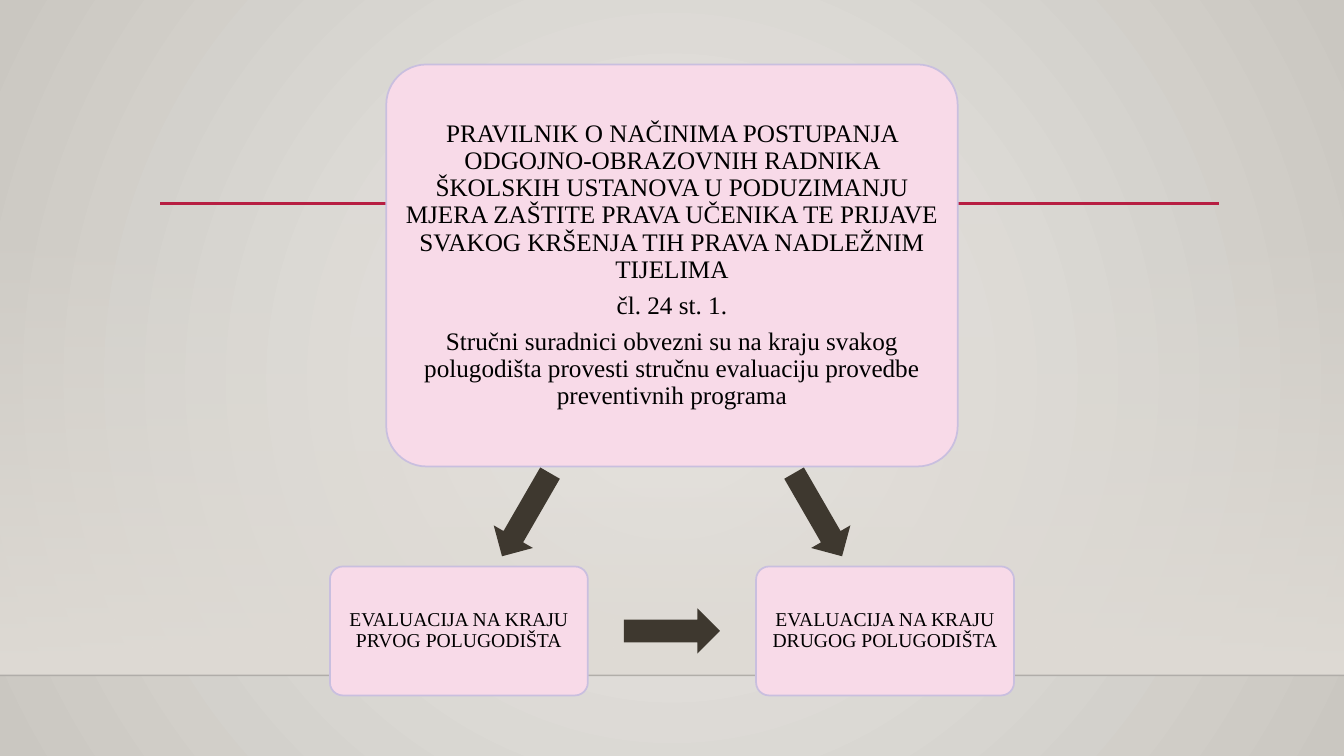
from lxml import etree
from pptx import Presentation, util as u
from pptx.dml.color import RGBColor
from pptx.enum import shapes, text
from pptx.oxml.ns import qn

COLORS = {
    "glow": "ECEAE7", "edge": "CAC7C1", "wall": "DFDBD5", "floor": "000001",
    "rule": "B71E42", "box": "F8DAE8", "border": "C9BFDF", "arrow": "3E382F",
    "ink": "000000",
}
WIDTH, HEIGHT = 33.87, 19.05
MIDDLE = WIDTH / 2
FLOOR = 17.02
STEP_Y, STEP_OFFSET = 15.9, 5.37
BRANCH_Y, BRANCH_OFFSET = 12.97, 3.68


class Diagram:
    font = "Times New Roman"

    def __init__(self, slide):
        self.slide = slide

    def color(self, name):
        return RGBColor.from_string(COLORS[name])

    def fade(self, element, percent):
        tint = element.xpath(".//a:srgbClr")[0]
        etree.SubElement(tint, qn("a:alpha"), val=str(percent * 1000))

    def gradient(self, fill, *names):
        fill.gradient()
        for stop, name in zip(fill.gradient_stops, names):
            stop.color.rgb = self.color(name)

    def backdrop(self):
        self.gradient(self.slide.background.fill, "glow", "edge")
        linear = self.slide._element.xpath(".//p:bgPr/a:gradFill/a:lin")[0]
        circle = etree.Element(qn("a:path"), path="circle")
        etree.SubElement(circle, qn("a:fillToRect"),
                         l="50000", t="50000", r="50000", b="50000")
        linear.getparent().replace(linear, circle)

    def shape(self, kind, x, y, width, height):
        shape = self.slide.shapes.add_shape(
            kind, u.Cm(x - width / 2), u.Cm(y - height / 2), u.Cm(width), u.Cm(height))
        shape.shadow.inherit = False
        shape.line.fill.background()
        return shape

    def wall(self, top, bottom):
        wall = self.shape(shapes.MSO_SHAPE.RECTANGLE, MIDDLE, (top + bottom) / 2,
                          WIDTH, bottom - top)
        self.gradient(wall.fill, "wall", "wall")
        wall.fill.gradient_angle = 270
        self.fade(wall._element, 0)

    def line(self, left, right, y, name, weight, opacity=100):
        line = self.slide.shapes.add_connector(
            shapes.MSO_CONNECTOR.STRAIGHT, u.Cm(left), u.Cm(y), u.Cm(right), u.Cm(y))
        line.line.color.rgb = self.color(name)
        line.line.width = u.Pt(weight)
        if opacity < 100:
            self.fade(line._element, opacity)
        etree.SubElement(line._element.spPr, qn("a:effectLst"))

    def box(self, x, y, width, height, size, inset, wording):
        box = self.shape(shapes.MSO_SHAPE.ROUNDED_RECTANGLE, x, y, width, height)
        box.adjustments[0] = 0.1
        box.fill.solid()
        box.fill.fore_color.rgb = self.color("box")
        box.line.color.rgb = self.color("border")
        box.line.width = u.Pt(1.25)
        frame = box.text_frame
        frame.word_wrap = True
        frame.vertical_anchor = text.MSO_ANCHOR.MIDDLE
        frame.margin_left = frame.margin_right = u.Cm(inset)
        frame.margin_top = frame.margin_bottom = u.Cm(inset)
        frame.text = wording
        for paragraph in frame.paragraphs:
            paragraph.alignment = text.PP_ALIGN.CENTER
            paragraph.line_spacing = 0.9
            paragraph.space_after = u.Pt(size * 0.35)
            for run in paragraph.runs:
                run.font.name = self.font
                run.font.size = u.Pt(size)
                run.font.color.rgb = self.color("ink")

    def arrow(self, x, y, angle):
        arrow = self.shape(shapes.MSO_SHAPE.RIGHT_ARROW, x, y, 2.42, 1.14)
        arrow.rotation = angle
        arrow.fill.solid()
        arrow.fill.fore_color.rgb = self.color("arrow")


def main():
    deck = Presentation()
    deck.slide_width, deck.slide_height = u.Cm(WIDTH), u.Cm(HEIGHT)
    diagram = Diagram(deck.slides.add_slide(deck.slide_layouts[6]))

    diagram.backdrop()
    diagram.wall(5.61, FLOOR)
    diagram.line(0, WIDTH, FLOOR, "floor", 1, opacity=20)
    diagram.line(4.04, 30.73, 5.13, "rule", 2.5)

    regulation = "\n".join([
        "PRAVILNIK O NAČINIMA POSTUPANJA ODGOJNO-OBRAZOVNIH RADNIKA ŠKOLSKIH "
        "USTANOVA U PODUZIMANJU MJERA ZAŠTITE PRAVA UČENIKA TE PRIJAVE SVAKOG "
        "KRŠENJA TIH PRAVA NADLEŽNIM TIJELIMA",
        "čl. 24 st. 1.",
        "Stručni suradnici obvezni su na kraju svakog polugodišta provesti "
        "stručnu evaluaciju provedbe preventivnih programa",
    ])
    diagram.box(MIDDLE, 6.69, 14.4, 10.13, 18, 0.18, regulation)

    for side, angle, term in ((-1, 120, "PRVOG"), (1, 60, "DRUGOG")):
        diagram.arrow(MIDDLE + side * BRANCH_OFFSET, BRANCH_Y, angle)
        diagram.box(MIDDLE + side * STEP_OFFSET, STEP_Y, 6.5, 3.25, 14, 0.15,
                    f"EVALUACIJA NA KRAJU {term} POLUGODIŠTA")
    diagram.arrow(MIDDLE, STEP_Y, 0)

    deck.save("out.pptx")


if __name__ == "__main__":
    main()
